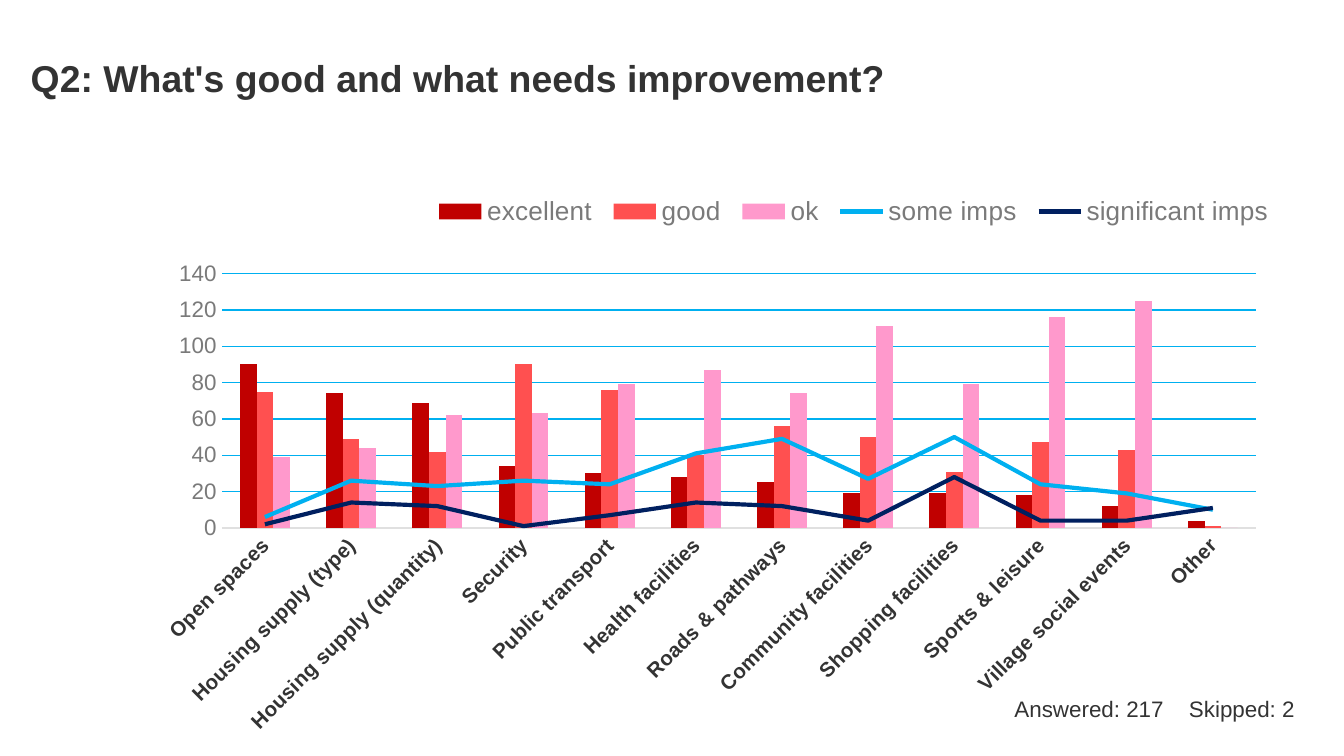
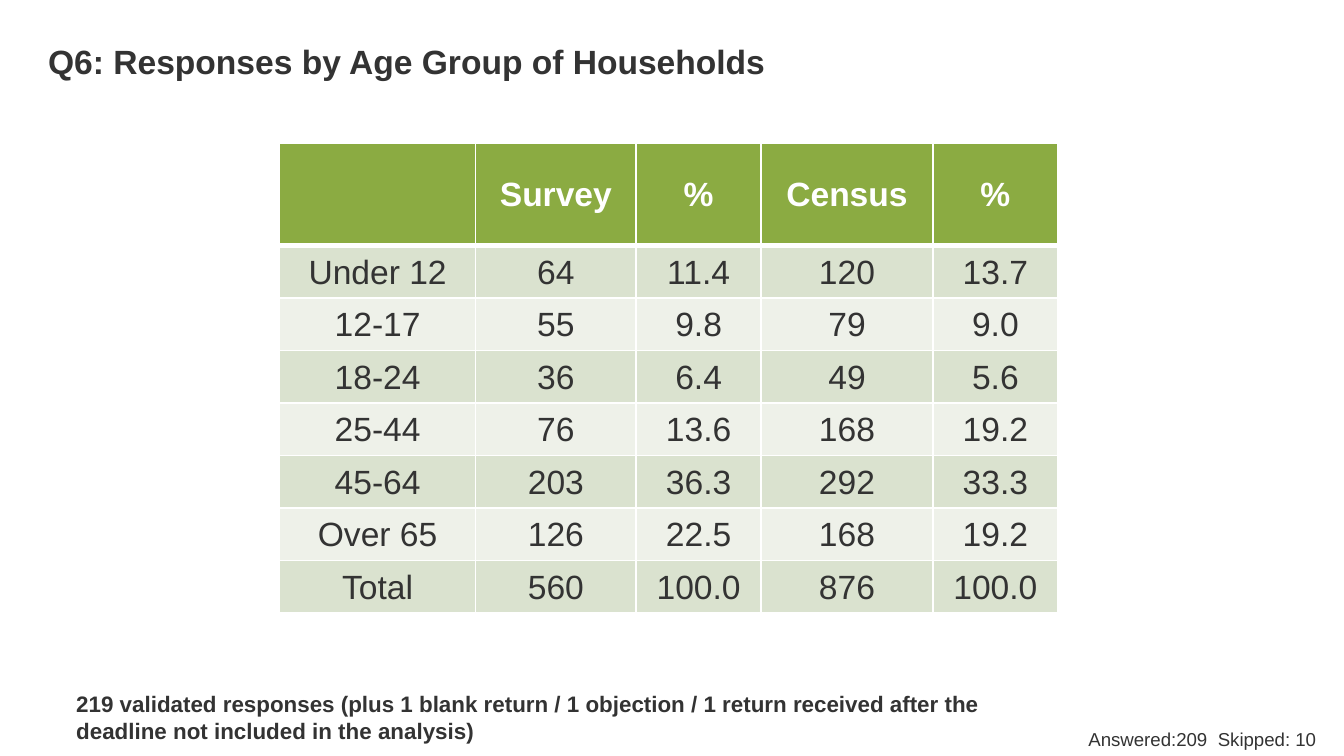
from pptx import Presentation
from pptx.chart.data import CategoryChartData
from pptx.dml.color import RGBColor
from pptx.enum.chart import XL_CHART_TYPE, XL_LEGEND_POSITION, XL_MARKER_STYLE, XL_TICK_MARK
from pptx.enum.text import MSO_ANCHOR, PP_ALIGN
from pptx.oxml import parse_xml
from pptx.oxml.ns import nsdecls, qn
from pptx.util import Pt

# Shared look
FONT = "Arial"
DARK = RGBColor(0x33, 0x33, 0x33)
GREY = RGBColor(0x7A, 0x7A, 0x7A)
AXIS = RGBColor(0xE0, 0xE0, 0xE0)
WHITE = RGBColor(0xFF, 0xFF, 0xFF)
DEEP_RED = RGBColor(0xC0, 0x00, 0x00)
CORAL = RGBColor(0xFF, 0x50, 0x50)
PINK = RGBColor(0xFF, 0x99, 0xCC)
SKY = RGBColor(0x00, 0xB0, 0xF0)
NAVY = RGBColor(0x00, 0x20, 0x60)
GREEN = RGBColor(0x8B, 0xAB, 0x42)
BANDS = [RGBColor(0xDA, 0xE2, 0xCF), RGBColor(0xEE, 0xF1, 0xE9)]


def style_font(font, size, color=DARK, bold=False):
    font.name = FONT
    font.size = Pt(size)
    font.bold = bold
    font.color.rgb = color


def add_text(s, text, box, size, bold=False, tab=None, top=None):
    """Add a text box; tab is a tab stop, top an inset for top-anchored text."""
    sp = s.shapes.add_textbox(*[Pt(v) for v in box])
    tf = sp.text_frame
    tf.word_wrap = True
    tf.vertical_anchor = MSO_ANCHOR.MIDDLE
    if top is not None:
        tf.vertical_anchor = MSO_ANCHOR.TOP
        tf.margin_top = Pt(top)
    p = tf.paragraphs[0]
    if tab is not None:
        p._p.get_or_add_pPr().append(parse_xml(
            f'<a:tabLst {nsdecls("a")}><a:tab pos="{Pt(tab)}" algn="l"/></a:tabLst>'))
    r = p.add_run()
    r.text = text
    style_font(r.font, size, bold=bold)


prs = Presentation()
prs.slide_width, prs.slide_height = Pt(720), Pt(405)
blank = prs.slide_layouts[6]

# Slide 1: ratings chart
s = prs.slides.add_slide(blank)
add_text(s, "Q2: What's good and what needs improvement?", (9.4, 26, 648, 31), 20, bold=True)
add_text(s, "Answered: 217\tSkipped: 2", (536.4, 368.6, 172.8, 21.6), 12, tab=93.5)

ratings = [
    ("excellent", DEEP_RED, (90, 74, 69, 34, 30, 28, 25, 19, 19, 18, 12, 4)),
    ("good", CORAL, (75, 49, 42, 90, 76, 40, 56, 50, 31, 47, 43, 1)),
    ("ok", PINK, (39, 44, 62, 63, 79, 87, 74, 111, 79, 116, 125, 0)),
    ("some imps", SKY, (6, 26, 23, 26, 24, 41, 49, 27, 50, 24, 19, 10)),
    ("significant imps", NAVY, (2, 14, 12, 1, 7, 14, 12, 4, 28, 4, 4, 11)),
]
data = CategoryChartData()
data.categories = [
    "Open spaces", "Housing supply (type)", "Housing supply (quantity)", "Security",
    "Public transport", "Health facilities", "Roads & pathways", "Community facilities",
    "Shopping facilities", "Sports & leisure", "Village social events", "Other",
]
for name, color, values in ratings:
    data.add_series(name, values)
chart = s.shapes.add_chart(XL_CHART_TYPE.COLUMN_CLUSTERED, Pt(9.4), Pt(63.4),
                           Pt(684), Pt(332.6), data).chart
style_font(chart.font, 10)
chart.has_title = False

# Move the two improvement series into a line plot on the same axes
bars = chart.plots[0]
bars.gap_width, bars.overlap, bars.vary_by_categories = 219, 0, False
bar_xml = chart._chartSpace.find(".//" + qn("c:barChart"))
line_xml = parse_xml(f'<c:lineChart {nsdecls("c")}><c:grouping val="standard"/>'
                     '<c:varyColors val="0"/></c:lineChart>')
for ser in bar_xml.findall(qn("c:ser"))[3:]:
    for flag in ser.findall(qn("c:invertIfNegative")):
        ser.remove(flag)
    line_xml.append(ser)
line_xml.append(parse_xml(f'<c:marker {nsdecls("c")} val="1"/>'))
for ax in bar_xml.findall(qn("c:axId")):
    line_xml.append(parse_xml(f'<c:axId {nsdecls("c")} val="{ax.get("val")}"/>'))
bar_xml.addnext(line_xml)

bars, lines = chart.plots
for series, (name, color, values) in zip(bars.series, ratings[:3]):
    series.invert_if_negative = False
    series.format.fill.solid()
    series.format.fill.fore_color.rgb = color
for series, (name, color, values) in zip(lines.series, ratings[3:]):
    series.format.line.color.rgb = color
    series.format.line.width = Pt(2.25)
    series.marker.style = XL_MARKER_STYLE.NONE
    series.smooth = False

# Axes
cat, val = chart.category_axis, chart.value_axis
for axis in (cat, val):
    axis.major_tick_mark = axis.minor_tick_mark = XL_TICK_MARK.NONE
style_font(cat.tick_labels.font, 11, bold=True)
cat._element.find(qn("c:txPr")).find(qn("a:bodyPr")).set("rot", "-2700000")
cat.format.line.color.rgb = AXIS
cat.format.line.width = Pt(0.75)
style_font(val.tick_labels.font, 12, GREY)
val.minimum_scale, val.maximum_scale, val.major_unit = 0, 140, 20
val.format.line.fill.background()
val.has_major_gridlines = True
val.major_gridlines.format.line.color.rgb = SKY
val.major_gridlines.format.line.width = Pt(0.75)

# Legend and fixed places inside the chart
chart.has_legend = True
legend = chart.legend
legend.position = XL_LEGEND_POSITION.TOP
legend.include_in_layout = False
style_font(legend.font, 14, GREY)
plot_area = chart._chartSpace.find(".//" + qn("c:plotArea"))
for part, inner, place in (
    (plot_area, '<c:layoutTarget val="inner"/>', (0.16, 0.25, 0.81, 0.41)),
    (legend._element, "", (0.32, 0.11, 0.67, 0.08)),
):
    for old in part.findall(qn("c:layout")):
        part.remove(old)
    sizes = "".join(f'<c:{k} val="{v}"/>' for k, v in zip("xywh", place))
    layout = parse_xml(f'<c:layout {nsdecls("c")}><c:manualLayout>{inner}'
                       '<c:xMode val="edge"/><c:yMode val="edge"/>'
                       f'{sizes}</c:manualLayout></c:layout>')
    if part is plot_area:
        part.insert(0, layout)
    else:
        part.find(qn("c:legendPos")).addnext(layout)

# Slide 2: age group table
s = prs.slides.add_slide(blank)
add_text(s, "Q6: Responses by Age Group of Households", (18.7, 17.3, 648, 31), 18, bold=True)
add_text(s, "Answered:209\tSkipped: 10", (576, 386, 165, 19.4), 10, tab=69.3)

rows = [
    ("", "Survey", "%", "Census", "%"),
    ("Under 12", "64", "11.4", "120", "13.7"),
    ("12-17", "55", "9.8", "79", "9.0"),
    ("18-24", "36", "6.4", "49", "5.6"),
    ("25-44", "76", "13.6", "168", "19.2"),
    ("45-64", "203", "36.3", "292", "33.3"),
    ("Over 65", "126", "22.5", "168", "19.2"),
    ("Total", "560", "100.0", "876", "100.0"),
]
widths = (105, 86, 67, 92, 67)
table = s.shapes.add_table(len(rows), len(widths), Pt(149.8), Pt(76.5),
                           Pt(sum(widths)), Pt(252)).table
table.horz_banding = False
for column, width in zip(table.columns, widths):
    column.width = Pt(width)
for i, row in enumerate(rows):
    table.rows[i].height = Pt(28.15 if i else 55)
    for j, text in enumerate(row):
        cell = table.cell(i, j)
        cell.vertical_anchor = MSO_ANCHOR.MIDDLE
        cell.margin_left = cell.margin_right = cell.margin_top = Pt(0.7)
        cell.margin_bottom = Pt(0)
        # White borders, thicker under the header
        for side in "LRTB":
            thick = (i, side) in ((0, "B"), (1, "T"))
            cell._tc.get_or_add_tcPr().append(parse_xml(
                f'<a:ln{side} {nsdecls("a")} w="{Pt(3 if thick else 1)}"><a:solidFill>'
                f'<a:srgbClr val="{WHITE}"/></a:solidFill></a:ln{side}>'))
        cell.fill.solid()
        cell.fill.fore_color.rgb = BANDS[(i - 1) % 2] if i else GREEN
        if text:
            p = cell.text_frame.paragraphs[0]
            p.alignment = PP_ALIGN.CENTER
            r = p.add_run()
            r.text = text
            style_font(r.font, 18, DARK if i else WHITE, bold=i == 0)

# Note below the table
add_text(s, "219 validated responses (plus 1 blank return / 1 objection / 1 return received "
         "after the deadline not included in the analysis)",
         (33.8, 352, 532.8, 53.3), 12, bold=True, top=18)

prs.save("out.pptx")
